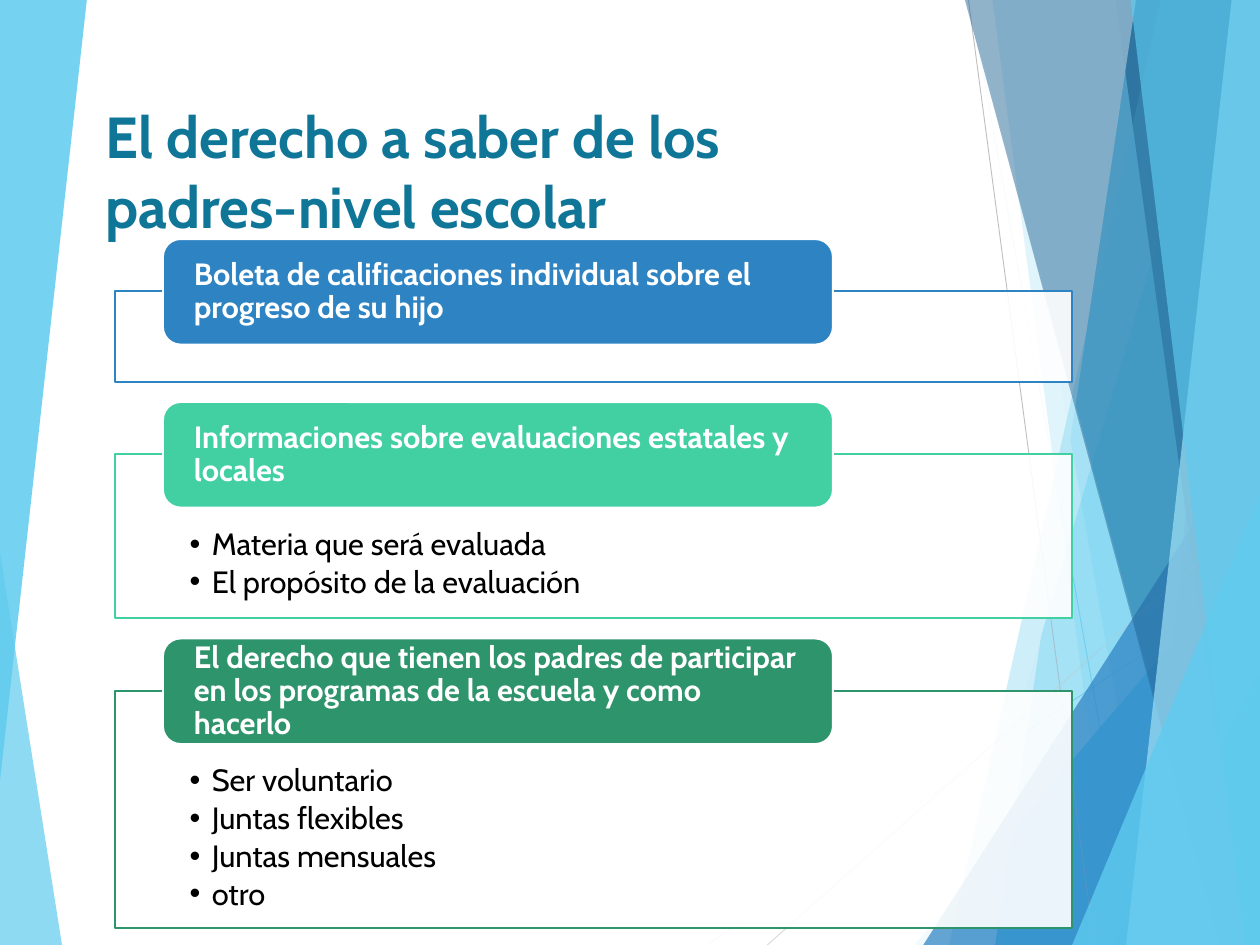
from dataclasses import dataclass

from lxml import etree
from pptx import Presentation
from pptx.dml.color import RGBColor
from pptx.enum.shapes import MSO_CONNECTOR, MSO_SHAPE
from pptx.enum.text import MSO_ANCHOR, MSO_AUTO_SIZE, PP_ALIGN
from pptx.oxml.ns import qn
from pptx.util import Inches, Pt

WIDTH, HEIGHT = 14.22, 10.67


@dataclass(frozen=True)
class Theme:
    font: str = "Cabin"
    title_size: int = 47
    text_size: int = 25
    title: str = "0F7698"
    text: str = "000000"
    white: str = "FFFFFF"
    sky: str = "5FCBEF"
    pale_sky: str = "9FE0F5"
    cyan: str = "17B0E4"
    blue: str = "2E83C3"
    navy: str = "226292"
    mint: str = "42D0A2"
    green: str = "2E946B"
    gray: str = "BFBFBF"
    light_gray: str = "D9D9D9"


THEME = Theme()

TOPICS = [
    ("Boleta de calificaciones individual sobre el progreso de su hijo",
     [], THEME.blue, 1.02),
    ("Informaciones sobre evaluaciones estatales y locales",
     ["Materia que será evaluada", "El propósito de la evaluación"],
     THEME.mint, 1.85),
    ("El derecho que tienen los padres de participar en los programas "
     "de la escuela y como hacerlo",
     ["Ser voluntario", "Juntas flexibles", "Juntas mensuales", "otro"],
     THEME.green, 2.68),
]


def set_alpha(color_parent, percent):
    alpha = etree.SubElement(color_parent.find(qn("a:solidFill"))[0], qn("a:alpha"))
    alpha.set("val", str(percent * 1000))


def paint(shape, color, opacity=100, outline=None):
    shape.fill.solid()
    shape.fill.fore_color.rgb = RGBColor.from_string(color)
    if opacity < 100:
        set_alpha(shape.element.spPr, opacity)
    if outline:
        shape.line.color.rgb = RGBColor.from_string(outline)
        shape.line.width = Pt(1.5)
    else:
        shape.line.fill.background()


def add_preset(slide, preset, box, adjustment=None):
    shape = slide.shapes.add_shape(preset, *map(Inches, box))
    shape.shadow.inherit = False
    if adjustment is not None:
        shape.adjustments[0] = adjustment
    return shape


def place(placeholder, box):
    """Move a placeholder to the box and to the front."""
    placeholder.left, placeholder.top, placeholder.width, placeholder.height = map(Inches, box)
    placeholder.element.getparent().append(placeholder.element)


def set_frame(frame, anchor, insets):
    frame.word_wrap = True
    frame.auto_size = MSO_AUTO_SIZE.NONE
    frame.vertical_anchor = anchor
    (frame.margin_left, frame.margin_top,
     frame.margin_right, frame.margin_bottom) = map(Inches, insets)


def format_paragraph(paragraph, size, color, bold=False, spacing=1.0):
    paragraph.alignment = PP_ALIGN.LEFT
    paragraph.line_spacing = spacing
    paragraph.space_before = Pt(0)
    for run in paragraph.runs:
        run.font.name = THEME.font
        run.font.size = Pt(size)
        run.font.bold = bold
        run.font.color.rgb = RGBColor.from_string(color)


def add_bullet(paragraph):
    properties = paragraph._p.get_or_add_pPr()
    properties.set("marL", str(Inches(0.25)))
    properties.set("indent", str(-Inches(0.25)))
    etree.SubElement(properties, qn("a:buChar")).set("char", "•")


def add_ray(slide, start, end, color, opacity=100):
    ray = slide.shapes.add_connector(
        MSO_CONNECTOR.STRAIGHT, *map(Inches, (*start, *end)))
    ray.line.color.rgb = RGBColor.from_string(color)
    ray.line.width = Pt(0.75)
    properties = ray.element.spPr
    if opacity < 100:
        set_alpha(properties.find(qn("a:ln")), opacity)
    etree.SubElement(properties, qn("a:effectLst"))


def add_band(slide, top_x, bottom_x, color, opacity):
    """Fill from a slanted left edge to the right edge of the slide."""
    corners = [(top_x, 0), (WIDTH, 0), (WIDTH, HEIGHT), (bottom_x, HEIGHT)]
    points = [(Inches(x), Inches(y)) for x, y in corners]
    outline = slide.shapes.build_freeform(*points[0], scale=1.0)
    outline.add_line_segments(points[1:], close=True)
    band = outline.convert_to_shape()
    band.shadow.inherit = False
    paint(band, color, opacity)


def add_corner(slide, left, top, color, opacity):
    """Fill the lower right corner with a triangle."""
    corner = add_preset(slide, MSO_SHAPE.ISOSCELES_TRIANGLE,
                        (left, top, WIDTH - left, HEIGHT - top), 1)
    paint(corner, color, opacity)


def draw_back_facets(slide):
    lower_left = add_preset(slide, MSO_SHAPE.ISOSCELES_TRIANGLE,
                            (0, 6.24, 0.7, HEIGHT - 6.24), 0)
    paint(lower_left, THEME.sky, 70)
    add_ray(slide, (7.98, HEIGHT), (WIDTH, 6.5), THEME.sky, 70)
    add_ray(slide, (10.95, 0), (12.85, HEIGHT), THEME.sky, 70)
    add_band(slide, 13.87, 10.72, THEME.sky, 36)
    add_band(slide, 11.21, 13.08, THEME.sky, 20)
    add_corner(slide, 10.32, 6.1, THEME.cyan, 66)
    add_band(slide, 10.9, 13.79, THEME.cyan, 50)
    add_band(slide, 13.96, 12.9, THEME.blue, 70)
    add_band(slide, 12.59, 14.05, THEME.navy, 82)
    add_corner(slide, 12.55, 7.61, THEME.cyan, 66)


def draw_front_facets(slide):
    upper_left = add_preset(slide, MSO_SHAPE.ISOSCELES_TRIANGLE, (0, 0, 0.98, 8.81), 1)
    upper_left.rotation = 180
    paint(upper_left, THEME.sky, 85)
    veil = add_preset(slide, MSO_SHAPE.PARALLELOGRAM, (1.89, 0, 10.93, HEIGHT), 0.149)
    paint(veil, THEME.white, 92)
    add_ray(slide, (10.93, 0), (12.35, HEIGHT), THEME.gray)
    add_ray(slide, (WIDTH, 5.73), (8.66, HEIGHT), THEME.light_gray)
    add_band(slide, 13.1, 10.71, THEME.sky, 30)
    add_band(slide, 11.2, 12.61, THEME.sky, 20)
    add_corner(slide, 10.42, 4.74, THEME.blue, 72)
    add_band(slide, 10.89, 13.77, THEME.navy, 47)
    add_band(slide, 13.9, 12.71, THEME.pale_sky, 70)
    add_band(slide, 12.76, 14.05, THEME.sky, 65)
    add_corner(slide, 12.1, 5.58, THEME.sky, 80)


def write_title(title, box):
    place(title, box)
    title.text_frame.text = "El derecho a saber de los padres-nivel escolar"
    set_frame(title.text_frame, MSO_ANCHOR.TOP, (0.1, 0.07, 0.1, 0.07))
    format_paragraph(title.text_frame.paragraphs[0], THEME.title_size, THEME.title, bold=True)


def write_list(body, items):
    set_frame(body.text_frame, MSO_ANCHOR.TOP, (0.84, 0.84, 0.84, 0.19))
    body.text_frame.text = "\n".join(items)
    for paragraph in body.text_frame.paragraphs:
        format_paragraph(paragraph, THEME.text_size, THEME.text, spacing=0.9)
        paragraph.space_after = Pt(0.15 * THEME.text_size)
        add_bullet(paragraph)


def draw_topic(slide, box, heading, items, color, bodies):
    left, top, width, _ = box
    if items:
        panel = next(bodies)
        place(panel, box)
        write_list(panel, items)
    else:
        panel = add_preset(slide, MSO_SHAPE.RECTANGLE, box)
    paint(panel, THEME.white, 90, outline=color)

    label = add_preset(slide, MSO_SHAPE.ROUNDED_RECTANGLE,
                       (left + 0.54, top - 0.59, 0.7 * width, 1.19))
    paint(label, color, outline=THEME.white)
    set_frame(label.text_frame, MSO_ANCHOR.MIDDLE, (0.29, 0, 0.29, 0))
    label.text_frame.text = heading
    format_paragraph(label.text_frame.paragraphs[0], THEME.text_size,
                     THEME.white, bold=True, spacing=0.9)


def main():
    deck = Presentation()
    deck.slide_width, deck.slide_height = Inches(WIDTH), Inches(HEIGHT)
    two_content = deck.slide_layouts[3]
    slide = deck.slides.add_slide(two_content)
    title, *lists = slide.placeholders
    draw_back_facets(slide)
    draw_front_facets(slide)
    write_title(title, (1.09, 1.07, 7.57, 2.05))
    bodies = iter(lists)
    top = 3.29
    for heading, items, color, height in TOPICS:
        draw_topic(slide, (1.3, top, 10.8, height), heading, items, color, bodies)
        top += height + 0.82
    deck.save("out.pptx")


if __name__ == "__main__":
    main()
